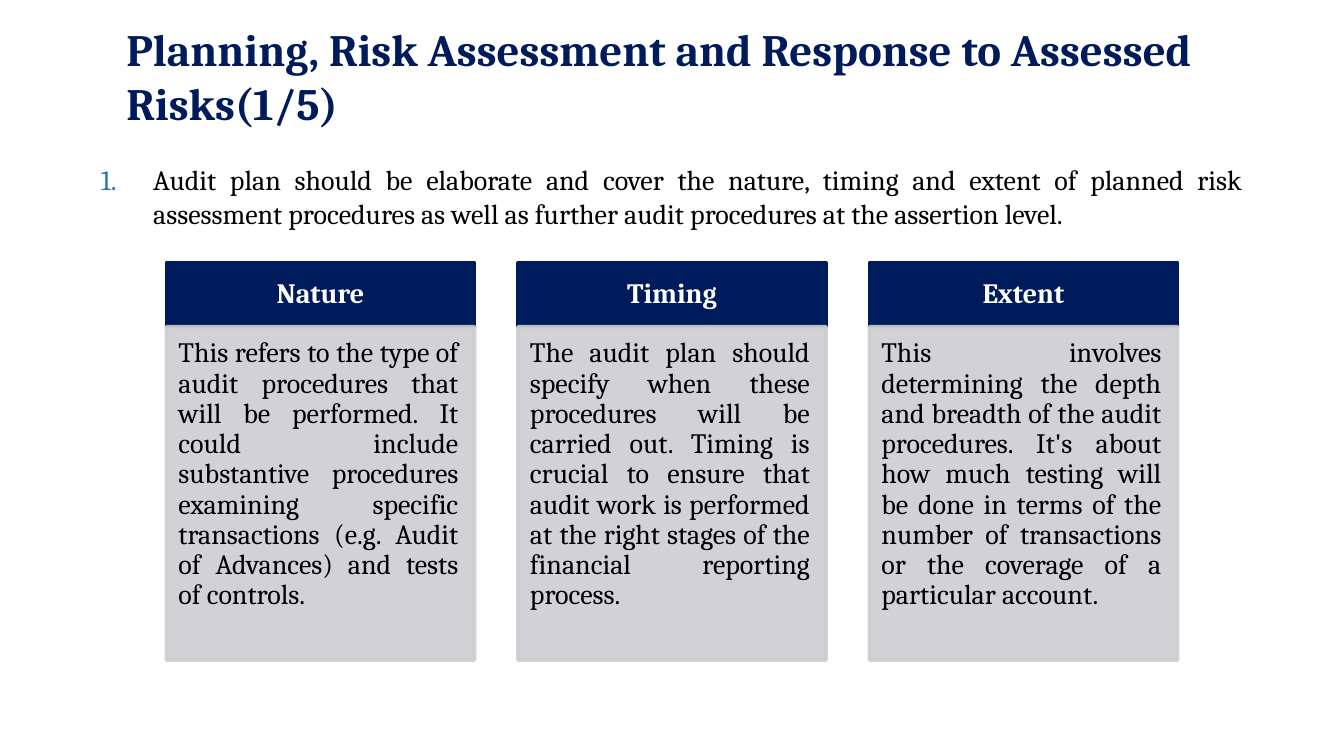
from lxml.etree import SubElement
from pptx import Presentation
from pptx.dml.color import RGBColor
from pptx.enum.shapes import MSO_SHAPE
from pptx.enum.text import MSO_ANCHOR, MSO_AUTO_SIZE, PP_ALIGN
from pptx.oxml.ns import qn
from pptx.util import Pt

FONT = "Cambria"
NAVY, GREY, BLUE = "001B5C", "CCCDD2", "2E75B6"
BLACK, WHITE = "000000", "FFFFFF"

TITLE = "Planning, Risk Assessment and Response to Assessed Risks(1/5)"
POINT = ("Audit plan should be elaborate and cover the nature, timing and extent of "
         "planned risk assessment procedures as well as further audit procedures at "
         "the assertion level.")
COLUMNS = [
    ("Nature",
     "This refers to the type of audit procedures that will be performed. It could "
     "include substantive procedures examining specific transactions (e.g. Audit of "
     "Advances) and tests of controls."),
    ("Timing",
     "The audit plan should specify when these procedures will be carried out. Timing "
     "is crucial to ensure that audit work is performed at the right stages of the "
     "financial reporting process."),
    ("Extent",
     "This involves determining the depth and breadth of the audit procedures. It's "
     "about how much testing will be done in terms of the number of transactions or "
     "the coverage of a particular account."),
]


def color(hex_string):
    return RGBColor.from_string(hex_string)


def place(shape, box):
    shape.left, shape.top, shape.width, shape.height = (Pt(value) for value in box)


def write(shape, text, size, ink, align, bold=False, spacing=1.0,
          anchor=MSO_ANCHOR.TOP, insets=(7.2, 3.6, 7.2, 3.6)):
    """Fill a shape with one formatted paragraph and return it."""
    frame = shape.text_frame
    frame.text = text
    frame.word_wrap = True
    frame.auto_size = MSO_AUTO_SIZE.NONE
    frame.vertical_anchor = anchor
    (frame.margin_left, frame.margin_top,
     frame.margin_right, frame.margin_bottom) = (Pt(value) for value in insets)
    para = frame.paragraphs[0]
    para.alignment = align
    para.line_spacing = spacing
    para.space_before = Pt(0)
    for span in para.runs:
        span.font.name = FONT
        span.font.size = Pt(size)
        span.font.bold = bold
        span.font.color.rgb = color(ink)
    return para


def number_paragraph(para, indent, ink):
    properties = para._p.get_or_add_pPr()
    properties.set("marL", str(Pt(indent)))
    properties.set("indent", str(-Pt(indent)))
    bullet_color = SubElement(properties, qn("a:buClr"))
    SubElement(bullet_color, qn("a:srgbClr"), val=ink)
    SubElement(properties, qn("a:buFont"), typeface=FONT)
    SubElement(properties, qn("a:buAutoNum"), type="arabicPeriod")


def add_panel(page, box, fill, opacity=100):
    panel = page.shapes.add_shape(MSO_SHAPE.RECTANGLE, *(Pt(value) for value in box))
    panel.shadow.inherit = False
    panel.fill.solid()
    panel.fill.fore_color.rgb = color(fill)
    panel.line.color.rgb = color(fill)
    panel.line.width = Pt(2)
    if opacity < 100:
        for tint in panel._element.spPr.iter(qn("a:srgbClr")):
            SubElement(tint, qn("a:alpha"), val=str(opacity * 1000))
    return panel


def add_title(page, box):
    title = page.shapes.title
    place(title, box)
    write(title, TITLE, 24, NAVY, PP_ALIGN.LEFT, bold=True)


def add_point(page, box):
    body = page.placeholders[1]
    place(body, box)
    para = write(body, POINT, 15, BLACK, PP_ALIGN.JUSTIFY,
                 insets=(7.2, 21.8, 7.2, 3.6))
    number_paragraph(para, 28.1, BLUE)


def add_column(page, box, heading, detail):
    left, top, width, height = box
    header_height = 34
    # Heading band
    header = add_panel(page, (left, top, width, header_height), NAVY)
    write(header, heading, 15, WHITE, PP_ALIGN.CENTER, bold=True, spacing=0.9,
          anchor=MSO_ANCHOR.MIDDLE, insets=(8.6, 5, 8.6, 5))
    # Explanation below it
    panel = add_panel(page, (left, top + header_height, width, height - header_height),
                      GREY, opacity=90)
    write(panel, detail, 15, BLACK, PP_ALIGN.JUSTIFY, spacing=0.9,
          insets=(6.4, 6.4, 8.6, 9.6))


def add_columns(page, box, gap):
    left, top, width, height = box
    column_width = (width - gap * (len(COLUMNS) - 1)) / len(COLUMNS)
    for index, (heading, detail) in enumerate(COLUMNS):
        column_left = left + index * (column_width + gap)
        add_column(page, (column_left, top, column_width, height), heading, detail)


def main():
    deck = Presentation()
    deck.slide_width, deck.slide_height = Pt(720), Pt(405)
    page = deck.slides.add_slide(deck.slide_layouts[1])
    add_point(page, (46.8, 65.5, 626.4, 98))
    add_title(page, (60.5, 8, 616.3, 94.3))
    add_columns(page, (89.2, 141, 541.6, 212.6), gap=23.3)
    deck.save("out.pptx")


if __name__ == "__main__":
    main()
